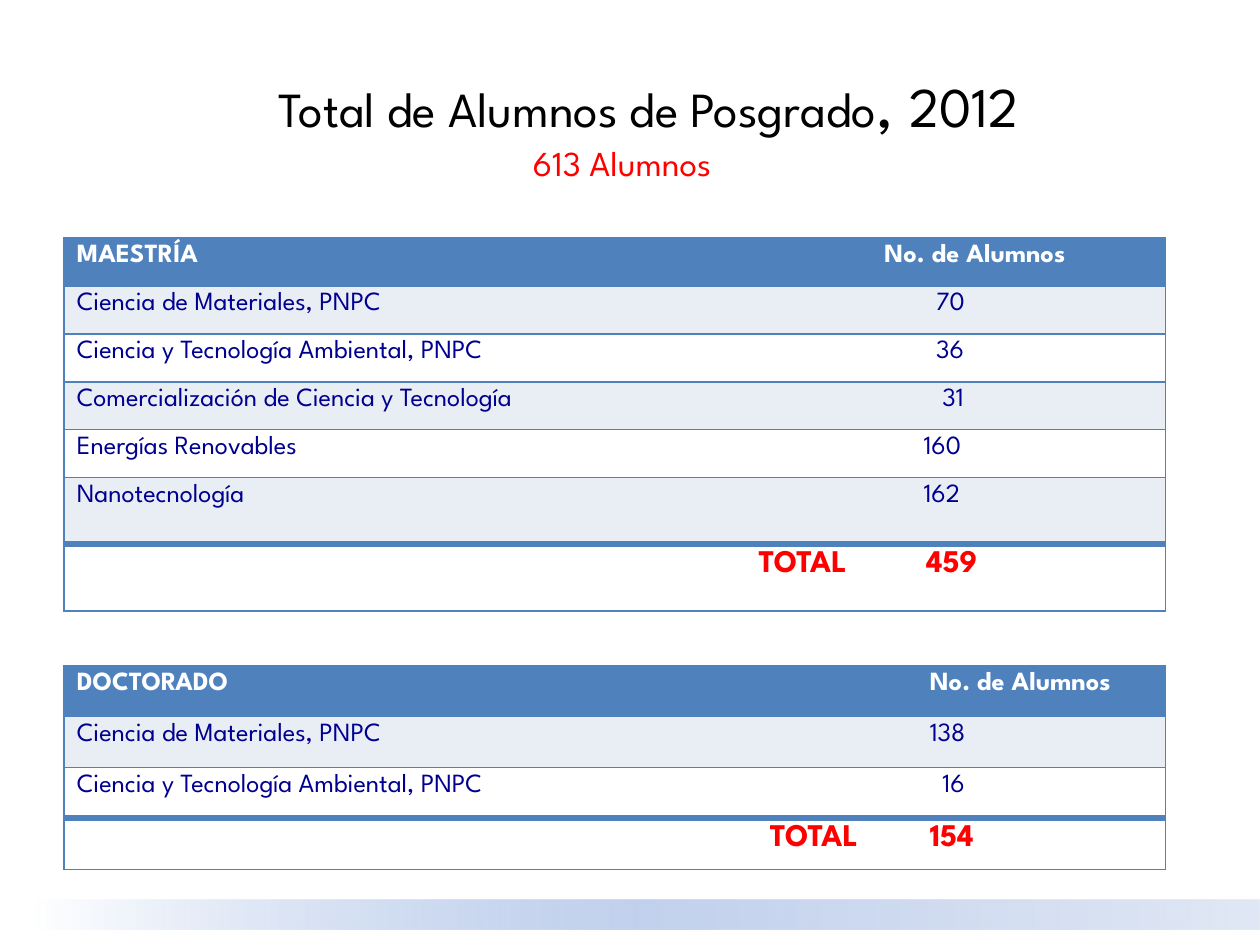
from pptx import Presentation
from pptx.dml.color import RGBColor
from pptx.enum.shapes import MSO_SHAPE
from pptx.enum.text import MSO_ANCHOR, PP_ALIGN
from pptx.oxml import parse_xml
from pptx.oxml.ns import nsdecls
from pptx.util import Inches, Pt

RECTANGLE = MSO_SHAPE.RECTANGLE
TOP = MSO_ANCHOR.TOP
LEFT, CENTER, RIGHT = PP_ALIGN.LEFT, PP_ALIGN.CENTER, PP_ALIGN.RIGHT

COLORS = {
    "black": "000000",
    "white": "FFFFFF",
    "red": "FF0000",
    "navy": "000090",
    "blue": "4F81BD",
    "band": "E9EDF4",
    "glow_start": "9AB5E4",
    "glow_middle": "C2D1ED",
    "glow_end": "E1E8F5",
}


class SlideBuilder:
    font_name = "League Spartan"
    columns, rows = 100, 75
    body_size, total_size = 15, 18
    thin, thick = 1, 4

    def __init__(self, presentation):
        self.unit_x = presentation.slide_width / self.columns
        self.unit_y = presentation.slide_height / self.rows
        self.slide = presentation.slides.add_slide(presentation.slide_layouts[6])

    def across(self, count):
        return round(count * self.unit_x)

    def down(self, count):
        return round(count * self.unit_y)

    def place(self, left, top, width, height):
        return self.across(left), self.down(top), self.across(width), self.down(height)

    def styled_run(self, paragraph, text, size, color, bold=False):
        run = paragraph.add_run()
        run.text = text
        run.font.name = self.font_name
        run.font.size = Pt(size)
        run.font.bold = bold
        run.font.color.rgb = RGBColor.from_string(COLORS[color])

    def glow_bar(self, area, stops):
        shape = self.slide.shapes.add_shape(RECTANGLE, *self.place(*area))
        shape.shadow.inherit = False
        shape.line.fill.background()
        shape.fill.gradient()
        shape.fill.gradient_angle = 0
        stop_list = shape.fill.gradient_stops[0]._gs.getparent()
        stop_list.clear()
        for position, color, opacity in stops:
            stop_list.append(parse_xml(
                f'<a:gs {nsdecls("a")} pos="{position * 1000}">'
                f'<a:srgbClr val="{COLORS[color]}"><a:alpha val="{opacity * 1000}"/>'
                '</a:srgbClr></a:gs>'))

    def text(self, area, runs, alignment=LEFT, indent=1, drop=0.5):
        shape = self.slide.shapes.add_textbox(*self.place(*area))
        frame = shape.text_frame
        frame.word_wrap = True
        frame.vertical_anchor = TOP
        frame.margin_left, frame.margin_top = self.across(indent), self.down(drop)
        paragraph = frame.paragraphs[0]
        paragraph.alignment = alignment
        for text, size, color in runs:
            self.styled_run(paragraph, text, size, color)

    def border(self, cell, side, width):
        paint = "<a:noFill/>"
        if width:
            paint = f'<a:solidFill><a:srgbClr val="{COLORS["blue"]}"/></a:solidFill>'
        cell._tc.get_or_add_tcPr().append(parse_xml(
            f'<a:ln{side} {nsdecls("a")} w="{Pt(width)}">{paint}</a:ln{side}>'))

    def table(self, area, widths, heights, records, total_margin):
        frame = self.slide.shapes.add_table(
            len(records), len(widths), *self.place(*area))
        table = frame.table
        table.first_row = table.horz_banding = False
        for column, width in zip(table.columns, widths):
            column.width = self.across(width)
        last = len(records) - 1
        for index, (label, value, indent) in enumerate(records):
            table.rows[index].height = self.down(heights[index])
            is_header, is_total = index == 0, index == last
            color = "white" if is_header else "red" if is_total else "navy"
            fill = "blue" if is_header else "band" if index % 2 and not is_total else "white"
            for position, content in enumerate((label, value)):
                cell = table.cell(index, position)
                self.border(cell, "L", 0 if position else self.thin)
                self.border(cell, "R", self.thin if position else 0)
                self.border(cell, "T", self.thick if is_total else self.thin)
                self.border(cell, "B", self.thick if index == last - 1 else self.thin)
                cell.fill.solid()
                cell.fill.fore_color.rgb = RGBColor.from_string(COLORS[fill])
                cell.margin_left = self.across(indent if position else 1)
                paragraph = cell.text_frame.paragraphs[0]
                if is_total and not position:
                    paragraph.alignment = RIGHT
                    cell.margin_right = self.across(total_margin)
                size = self.total_size if is_total else self.body_size
                self.styled_run(paragraph, content, size, color, is_header or is_total)


def main():
    presentation = Presentation()
    presentation.slide_width, presentation.slide_height = Inches(10), Inches(7.5)
    builder = SlideBuilder(presentation)
    builder.glow_bar((2.8, 71.4, 97.2, 2.4), [
        (0, "glow_start", 0), (50, "glow_middle", 100), (100, "glow_end", 100)])
    builder.text((6.5, 3, 90, 12.5), [
        ("Total de Alumnos de Posgrado", 28, "black"),
        (", ", 36, "black"),
        ("2012", 32, "black"),
    ], CENTER, drop=2.1)
    builder.table((5.1, 18.9, 87.4, 29.7), (63.1, 24.3), [3.8] * 5 + [5.3] * 2, [
        ("MAESTRÍA", "No. de Alumnos", 2),
        ("Ciencia de Materiales, PNPC", "70", 6.1),
        ("Ciencia y Tecnología Ambiental, PNPC", "36", 6.1),
        ("Comercialización de Ciencia y Tecnología", "31", 6.6),
        ("Energías Renovables", "160", 5.1),
        ("Nanotecnología", "162", 5.1),
        ("TOTAL", "459", 5.3),
    ], total_margin=1)
    builder.table((5.1, 52.8, 87.4, 16.2), (67.7, 19.7), [4.05] * 4, [
        ("DOCTORADO", "No. de Alumnos", 1),
        ("Ciencia de Materiales, PNPC", "138", 1),
        ("Ciencia y Tecnología Ambiental, PNPC", "16", 2),
        ("TOTAL", "154", 1),
    ], total_margin=4.7)
    builder.text((31.1, 10.7, 30.1, 4.4), [("613 Alumnos", 20, "red")], indent=11.2)
    presentation.save("out.pptx")


if __name__ == "__main__":
    main()
